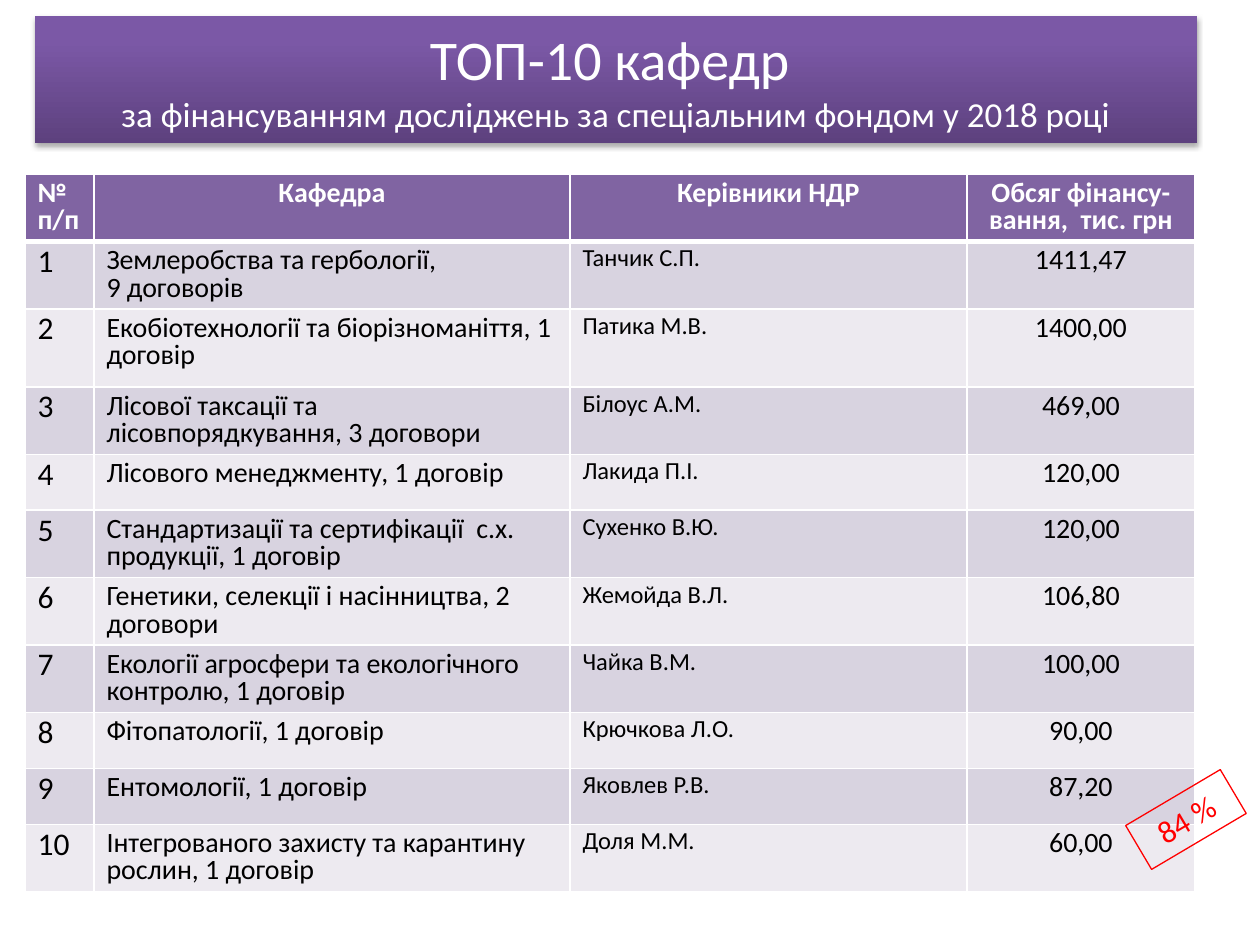
from lxml.etree import SubElement
from pptx import Presentation
from pptx.dml.color import RGBColor
from pptx.enum.shapes import MSO_SHAPE
from pptx.enum.text import MSO_ANCHOR, MSO_AUTO_SIZE, PP_ALIGN
from pptx.oxml import parse_xml
from pptx.oxml.ns import nsdecls, qn
from pptx.util import Pt

SCALE = 914400 / 126
WIDTHS = [69, 476, 397, 228]
HEIGHTS = [67, 67, 78, 67, 56, 67, 67, 67, 56, 56, 67]
SIZES = [18, 16, 14, 16]
HEADER = ["№ п/п", "Кафедра", "Керівники НДР", "Обсяг фінансу-вання,  тис. грн"]
ROWS = [
    ["Землеробства та гербології, \n9 договорів", "Танчик С.П.", "1411,47"],
    ["Екобіотехнології та біорізноманіття, 1 договір", "Патика М.В.", "1400,00"],
    ["Лісової таксації та лісовпорядкування, 3 договори", "Білоус А.М.", "469,00"],
    ["Лісового менеджменту, 1 договір", "Лакида П.І.", "120,00"],
    ["Стандартизації та сертифікації  с.х. продукції, 1 договір", "Сухенко В.Ю.", "120,00"],
    ["Генетики, селекції і насінництва, 2 договори", "Жемойда В.Л.", "106,80"],
    ["Екології агросфери та екологічного контролю, 1 договір", "Чайка В.М.", "100,00"],
    ["Фітопатології, 1 договір", "Крючкова Л.О.", "90,00"],
    ["Ентомології, 1 договір", "Яковлев Р.В.", "87,20"],
    ["Інтегрованого захисту та карантину рослин, 1 договір", "Доля М.М.", "60,00"],
]
HEIGHTS[4:6] = [56, 67]


def px(n):
    return round(n * SCALE)


def rgb(value):
    return RGBColor.from_string(value)


def assign(obj, values):
    for name, value in values.items():
        setattr(obj, name, value)


class Deck:
    font = "Calibri"
    white, black, red = "FFFFFF", "000000", "FF0000"
    head, bands = "8064A2", ["D8D3E0", "EDEAF0"]
    gradient = [(0, "5D417E"), (80, "7B58A6"), (100, "7B57A8")]

    def __init__(self, width, height):
        self.prs = Presentation()
        assign(self.prs, {"slide_width": px(width), "slide_height": px(height)})
        self.s = self.prs.slides.add_slide(self.prs.slide_layouts[5])

    def place(self, sp, left, top, width, height):
        assign(sp, {"left": px(left), "top": px(top), "width": px(width), "height": px(height)})

    def text(self, p, lines, color, bold=False, **layout):
        assign(p, layout)
        for i, (line, size) in enumerate(lines):
            if i:
                p.add_line_break()
                br = p._p.findall(qn("a:br"))[-1]
                SubElement(br, qn("a:rPr"), sz=str(size * 100))
            r = p.add_run()
            r.text = line
            assign(r.font, {"name": self.font, "size": Pt(size), "bold": bold})
            r.font.color.rgb = rgb(color)

    def title(self, box, lines):
        sp = self.s.shapes.title
        self.place(sp, *box)
        stops = "".join(
            f'<a:gs pos="{pos * 1000}"><a:srgbClr val="{color}"/></a:gs>'
            for pos, color in self.gradient
        )
        sp._element.spPr.append(parse_xml(
            f'<a:gradFill {nsdecls("a")} rotWithShape="1"><a:gsLst>{stops}</a:gsLst>'
            '<a:lin ang="16200000" scaled="0"/></a:gradFill>'
        ))
        sp._element.spPr.append(parse_xml(
            f'<a:effectLst {nsdecls("a")}><a:outerShdw blurRad="40000" dist="23000" '
            'dir="5400000" rotWithShape="0"><a:srgbClr val="000000">'
            '<a:alpha val="35000"/></a:srgbClr></a:outerShdw></a:effectLst>'
        ))
        tf = sp.text_frame
        assign(tf, {"auto_size": MSO_AUTO_SIZE.NONE, "word_wrap": True,
                    "vertical_anchor": MSO_ANCHOR.MIDDLE})
        self.text(tf.paragraphs[0], lines, self.white, alignment=PP_ALIGN.CENTER)

    def borders(self, cell, **widths):
        tc_pr = cell._tc.get_or_add_tcPr()
        for side in "LRTB":
            ln = SubElement(tc_pr, qn(f"a:ln{side}"), w=str(Pt(widths.get(side, 1))))
            SubElement(SubElement(ln, qn("a:solidFill")), qn("a:srgbClr"), val=self.white)

    def table(self, left, top, widths, heights, rows, sizes):
        frame = self.s.shapes.add_table(
            len(rows), len(widths), px(left), px(top), px(sum(widths)), px(sum(heights)))
        tbl = frame.table
        for col, width in zip(tbl.columns, widths):
            col.width = px(width)
        for i, (row, height, texts) in enumerate(zip(tbl.rows, heights, rows)):
            row.height = px(height)
            header = i == 0
            rules = {0: {"B": 3}, 1: {"T": 3}}.get(i, {})
            for j, (cell, text) in enumerate(zip(row.cells, texts)):
                self.borders(cell, **rules)
                cell.fill.solid()
                cell.fill.fore_color.rgb = rgb(self.head if header else self.bands[(i - 1) % 2])
                size = 16 if header else sizes[j]
                centred = j == 3 or header and j > 0
                self.text(
                    cell.text_frame.paragraphs[0],
                    [(line, size) for line in text.split("\n")],
                    self.white if header else self.black, header, line_spacing=0.8,
                    alignment=PP_ALIGN.CENTER if centred else PP_ALIGN.LEFT)

    def stamp(self, box, text, size, rotation):
        sp = self.s.shapes.add_shape(MSO_SHAPE.RECTANGLE, *map(px, box))
        sp.rotation = rotation
        sp.shadow.inherit = False
        sp.fill.background()
        sp.line.color.rgb = rgb(self.red)
        sp.line.width = Pt(0.75)
        tf = sp.text_frame
        assign(tf, {"word_wrap": True, "vertical_anchor": MSO_ANCHOR.TOP,
                    "auto_size": MSO_AUTO_SIZE.SHAPE_TO_FIT_TEXT})
        self.text(tf.paragraphs[0], [(text, size)], self.red, alignment=PP_ALIGN.CENTER)


def main():
    deck = Deck(1260, 945)
    deck.title((35, 16, 1162, 127), [
        ("ТОП-10 кафедр ", 32),
        ("за фінансуванням досліджень за спеціальним фондом у 2018 році", 20),
    ])
    rows = [HEADER] + [[str(n), *row] for n, row in enumerate(ROWS, 1)]
    deck.table(25, 174, WIDTHS, HEIGHTS, rows, SIZES)
    deck.stamp((1131, 794, 110, 51), "84 %", 18, 329.4)
    deck.prs.save("out.pptx")


if __name__ == "__main__":
    main()
